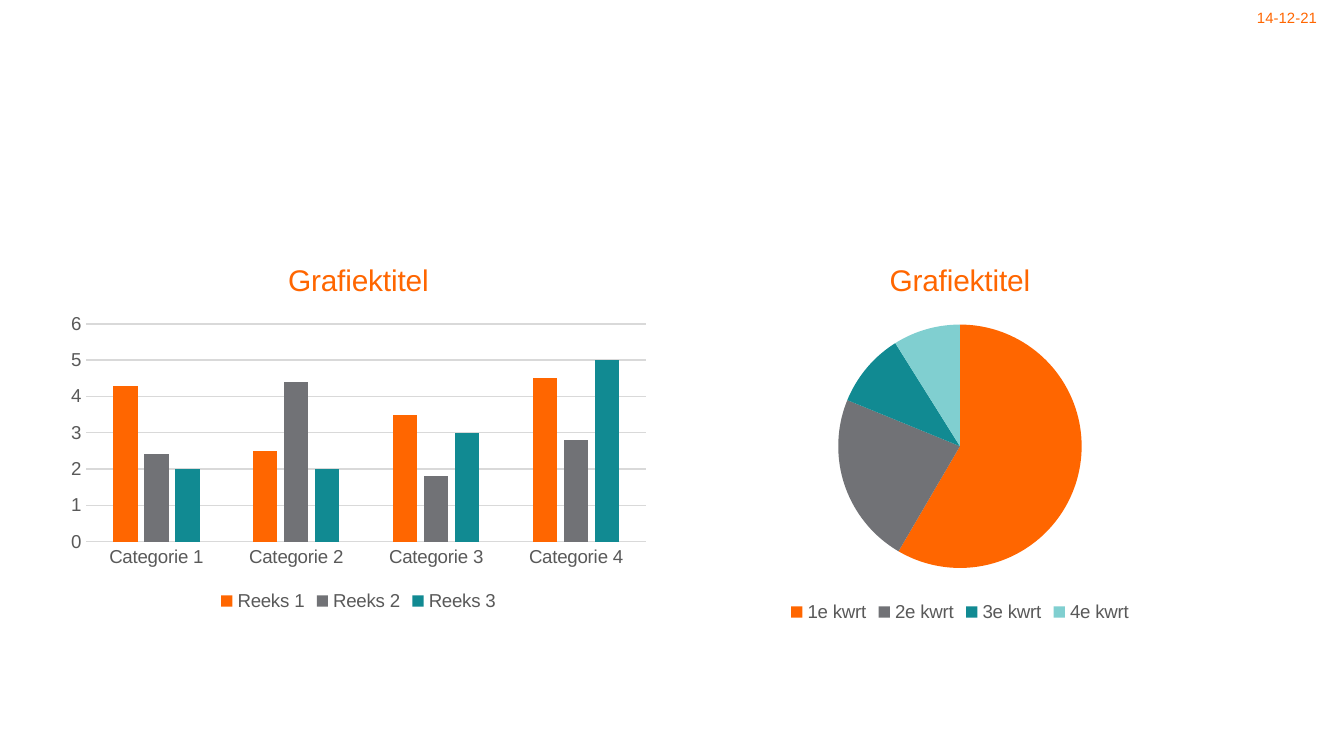
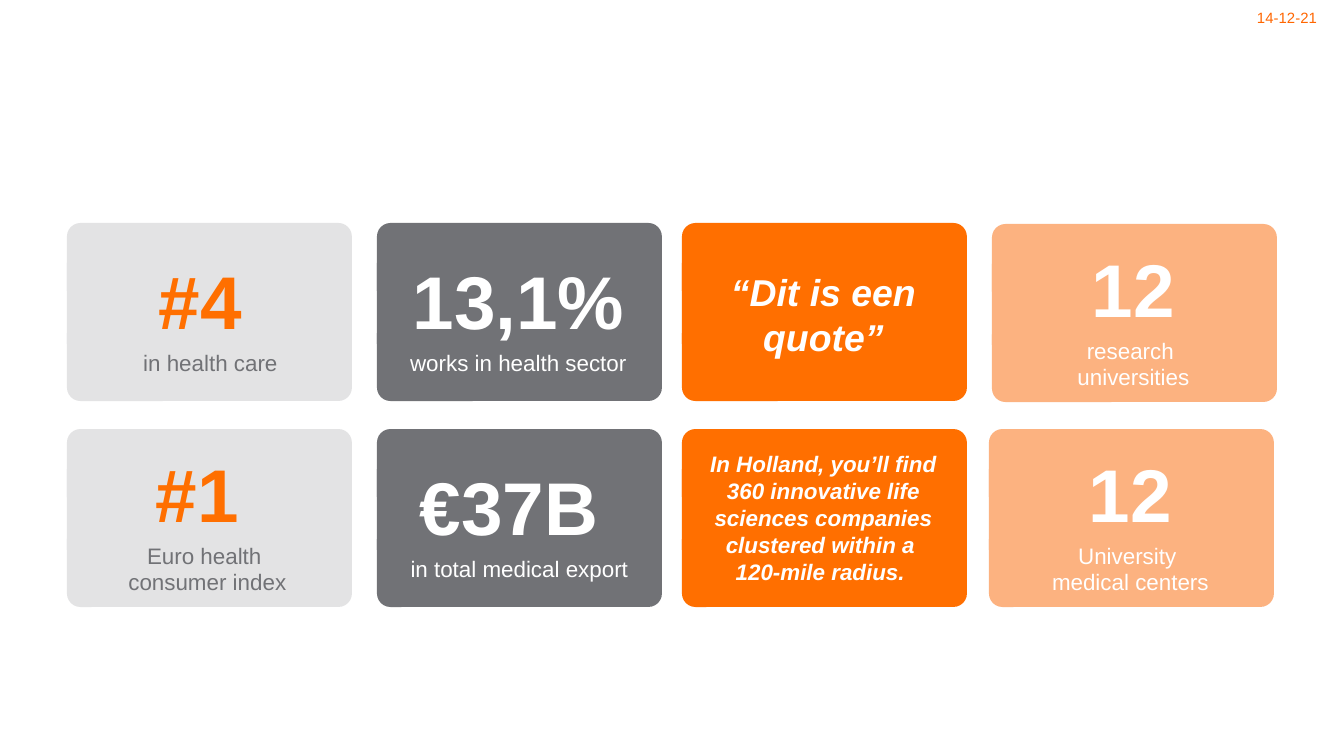
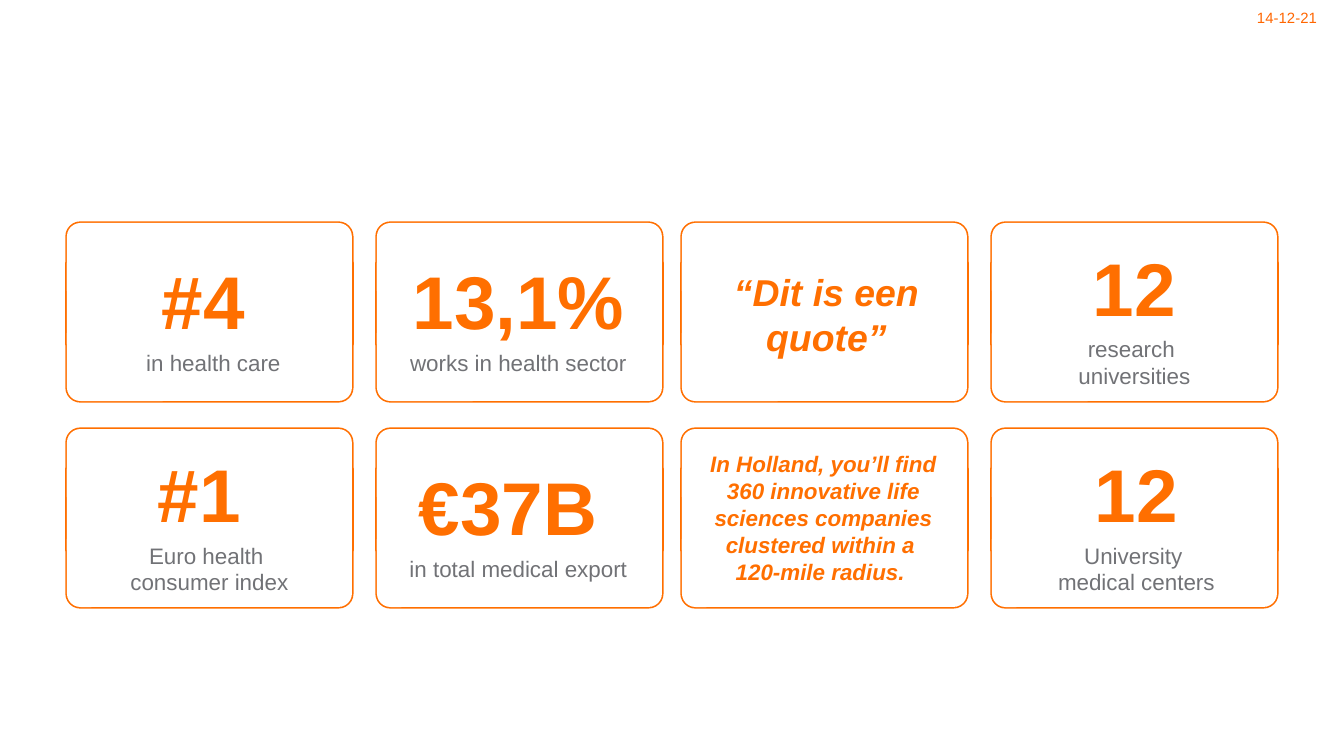
from copy import deepcopy
from dataclasses import dataclass

from pptx import Presentation, util as u
from pptx.chart.data import CategoryChartData
from pptx.dml.color import RGBColor
from pptx.enum import chart as ch, shapes as sh, text as tx
from pptx.oxml.ns import qn


@dataclass(frozen=True)
class Theme:
    """Colours, type sizes and font of the deck."""
    font: str = "Arial"
    accent: str = "FF6600"
    orange: str = "FF6F00"
    peach: str = "FCB280"
    slate: str = "717276"
    mist: str = "E3E3E4"
    teal: str = "118A92"
    aqua: str = "80CFD0"
    white: str = "FFFFFF"
    grid: str = "D9D9D9"
    label: str = "595959"
    tiny: int = 8
    small: int = 10
    body: int = 12
    title: int = 16
    quote: int = 20
    huge: int = 40


T = Theme()
SCALE = 914400 / 134.4
COLS = (67, 377, 682, 992)
ROWS = (223, 429)
CARD_W, PIECE_H, TEXT_H = 285, 81, 177
STATS = (
    "#4 \nin health care",
    "13,1%\nworks in health sector",
    "“Dit is een quote”",
    "12\nresearch \vuniversities",
    "#1 \nEuro health \vconsumer index",
    "€37B \nin total medical export",
    "In Holland, you’ll find 360 innovative life sciences companies "
    "clustered within a \v120-mile radius. ",
    "12\nUniversity \vmedical centers",
)


def px(*sizes):
    """Turn px lengths into EMU."""
    return [u.Emu(round(n * SCALE)) for n in sizes]


def rgb(tone):
    """Turn a hex string into a colour."""
    return RGBColor.from_string(tone)


def style(font, size, tone, bold=False, slant=False):
    """Set face, size, colour and weight of a font."""
    font.name, font.size = T.font, u.Pt(size)
    font.bold, font.italic = bold, slant
    font.color.rgb = rgb(tone)


def paint(para, *look):
    """Format the runs and line breaks of a paragraph."""
    for run in para.runs:
        style(run.font, *look)
    for gap in para._p.findall(qn("a:br")):
        gap.append(deepcopy(para.runs[0]._r.rPr))


def frame(slide, box, insets):
    """Add a wrapping text box and return its frame."""
    shape = slide.shapes.add_textbox(*px(*box))
    tf = shape.text_frame
    tf.word_wrap = True
    tf.margin_left, tf.margin_top, tf.margin_right, tf.margin_bottom = px(*insets)
    return shape, tf


def page(deck):
    """Add a blank slide with the date in its corner."""
    slide = deck.slides.add_slide(deck.slide_layouts[6])
    shape, tf = frame(slide, (1285, -19, 42, 98), (13, 0, 0, 7))
    shape.rotation = 270
    tf._txBody.bodyPr.set("vert", "eaVert")
    tf.text = "14-12-21"
    paint(tf.paragraphs[0], T.tiny, T.accent)
    return slide


def graph(slide, box, kind, cats, series):
    """Add a titled chart with a legend below."""
    data = CategoryChartData()
    data.categories = cats
    for name, vals in series:
        data.add_series(name, vals)
    chart = slide.shapes.add_chart(kind, *px(*box), data).chart
    style(chart.font, T.small, T.label)
    chart.has_title = True
    chart.chart_title.include_in_layout = False
    para = chart.chart_title.text_frame.paragraphs[0]
    para.text = "Grafiektitel"
    paint(para, T.title, T.accent)
    chart.has_legend = True
    chart.legend.position = ch.XL_LEGEND_POSITION.BOTTOM
    chart.legend.include_in_layout = False
    style(chart.legend.font, T.small, T.label)
    return chart


def tint(part, tone):
    """Fill a series or point with a solid colour."""
    part.format.fill.solid()
    part.format.fill.fore_color.rgb = rgb(tone)


def rule(line, tone):
    """Give a chart line its colour and width."""
    line.color.rgb = rgb(tone)
    line.width = u.Pt(0.75)


def bars(slide, box):
    """Add the column chart."""
    chart = graph(slide, box, ch.XL_CHART_TYPE.COLUMN_CLUSTERED,
                  [f"Categorie {n}" for n in range(1, 5)],
                  (("Reeks 1", (4.3, 2.5, 3.5, 4.5)),
                   ("Reeks 2", (2.4, 4.4, 1.8, 2.8)),
                   ("Reeks 3", (2, 2, 3, 5))))
    plot = chart.plots[0]
    plot.gap_width, plot.overlap, plot.vary_by_categories = 219, -27, False
    for part, tone in zip(plot.series, (T.accent, T.slate, T.teal)):
        tint(part, tone)
    for axis in (chart.category_axis, chart.value_axis):
        axis.major_tick_mark = axis.minor_tick_mark = ch.XL_TICK_MARK.NONE
        style(axis.tick_labels.font, T.small, T.label)
    rule(chart.category_axis.format.line, T.grid)
    value = chart.value_axis
    value.minimum_scale, value.maximum_scale, value.major_unit = 0, 6, 1
    value.format.line.fill.background()
    rule(value.major_gridlines.format.line, T.grid)


def pie(slide, box):
    """Add the pie chart."""
    chart = graph(slide, box, ch.XL_CHART_TYPE.PIE,
                  [f"{n}e kwrt" for n in range(1, 5)],
                  (("Series 1", (59, 23, 10, 9)),))
    plot = chart.plots[0]
    plot.vary_by_categories = True
    for spot, tone in enumerate((T.accent, T.slate, T.teal, T.aqua)):
        tint(plot.series[0].points[spot], tone)


def card(slide, left, top, fill, edge=None):
    """Group the pieces of a rounded card, outlined ones first."""
    group = slide.shapes.add_group_shape()
    kinds = sh.MSO_SHAPE
    for line in ((edge, None) if edge else (None,)):
        for kind, drop in ((kinds.ROUNDED_RECTANGLE, 0),
                           (kinds.ROUNDED_RECTANGLE, 97),
                           (kinds.RECTANGLE, 40)):
            piece = group.shapes.add_shape(
                kind, *px(left, top + drop, CARD_W, PIECE_H))
            piece.shadow.inherit = False
            piece.fill.solid()
            piece.fill.fore_color.rgb = rgb(fill)
            if line:
                piece.line.color.rgb = rgb(line)
                piece.line.width = u.Pt(1.75)
            else:
                piece.line.fill.background()


def words(slide, left, top, text, main, sub):
    """Write a figure with its label, or a quote, on a card."""
    stat, long = "\n" in text, len(text) > 60
    side, head = (11, 0) if long else (0, 8 if stat else 5)
    tf = frame(slide, (left, top, CARD_W - 2, TEXT_H), (side, head, side, 0))[1]
    tf.vertical_anchor = tx.MSO_ANCHOR.MIDDLE
    tf.text = text
    for para in tf.paragraphs:
        para.alignment = tx.PP_ALIGN.CENTER
    first = tf.paragraphs[0]
    if stat:
        paint(first, T.huge, main, True)
        note = tf.paragraphs[1]
        note.space_before = u.Pt(2.4)
        paint(note, T.body, sub)
    else:
        paint(first, T.body if long else T.quote, main, True, True)


def board(slide, spots, looks, shifts, edge=None):
    """Lay out the eight cards, then their words."""
    for spot, look in zip(spots, looks):
        card(slide, *spot, look[0], edge)
    for (left, top), look, text, shift in zip(spots, looks, STATS, shifts):
        words(slide, left + shift, top, text, *look[1:])


def main():
    """Build the deck."""
    deck = Presentation()
    deck.slide_width, deck.slide_height = px(1344, 756)

    slide = page(deck)
    bars(slide, (59, 241, 599, 376))
    pie(slide, (741, 241, 438, 387))

    spots = [(left, top) for top in ROWS for left in COLS]
    solid = ((T.mist, T.orange, T.slate), (T.slate, T.white, T.white),
             (T.orange, T.white, T.white), (T.peach, T.white, T.white))
    loose = spots[:3] + [(992, 224)] + spots[4:7] + [(989, 429)]
    board(page(deck), loose, solid * 2, (2, 0, 0, 0, -1, 1, 0, 0))

    plain = ((T.white, T.orange, T.slate),)
    board(page(deck), spots, plain * 8, (5, 0, 3, 1, 1, 0, 0, 3), T.orange)
    deck.save("out.pptx")


if __name__ == "__main__":
    main()
